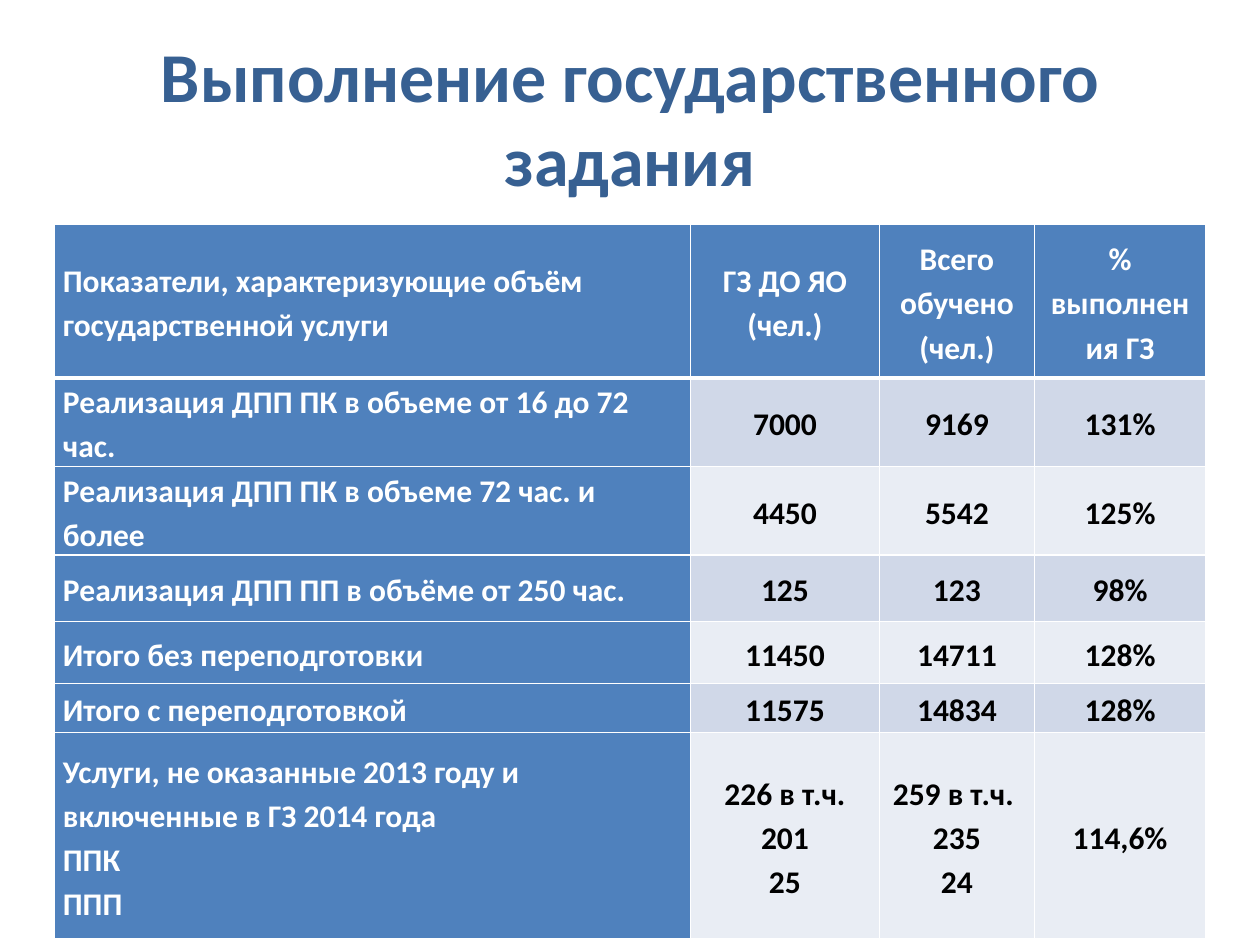
from lxml import etree
from pptx import Presentation
from pptx.dml.color import RGBColor
from pptx.enum.text import MSO_ANCHOR as Anchor, PP_ALIGN as Align
from pptx.oxml.ns import qn
from pptx.util import Inches, Pt

WHITE, BLUE = "FFFFFF", "4F81BD"
BANDS = ["D0D8E8", "E9EDF4"]
COLS = [5.05, 1.5, 1.23, 1.36]
HEIGHTS = [1.22, 0.65, 0.52, 0.53, 0.49, 0.39, 1.64]
ROWS = [
    ["Показатели, характеризующие объём государственной услуги",
     "ГЗ ДО ЯО (чел.)", "Всего обучено (чел.)", "% выполнения ГЗ"],
    ["Реализация ДПП ПК в объеме от 16 до 72 час.", "7000", "9169", "131%"],
    ["Реализация ДПП ПК в объеме 72 час. и более", "4450", "5542", "125%"],
    ["Реализация ДПП ПП в объёме от 250 час.", "125", "123", "98%"],
    ["Итого без переподготовки", "11450", "14711", "128%"],
    ["Итого с переподготовкой", "11575", "14834", "128%"],
    ["Услуги, не оказанные 2013 году и включенные в ГЗ 2014 года\nППК\nППП",
     "226 в т.ч.\n201\n25", "259 в т.ч. \n235\n24", "114,6%"],
]


def rgb(value):
    return RGBColor.from_string(value)


def set_borders(cell, widths):
    """Draw white borders; widths maps the sides L, R, T, B to points."""
    tc_pr = cell._tc.get_or_add_tcPr()
    for i, (side, width) in enumerate(widths.items()):
        ln = etree.Element(qn(f"a:ln{side}"), w=str(Pt(width)))
        fill = etree.SubElement(ln, qn("a:solidFill"))
        etree.SubElement(fill, qn("a:srgbClr"), val=WHITE)
        tc_pr.insert(i, ln)


prs = Presentation()
prs.slide_width, prs.slide_height = Inches(10), Inches(7.5)
s = prs.slides.add_slide(prs.slide_layouts[5])

title = s.shapes.title
title.left, title.top = Inches(0.5), Inches(0.3)
title.width, title.height = Inches(9), Inches(1.25)
tf = title.text_frame
tf.text = "Выполнение государственного задания"
tf.vertical_anchor = Anchor.MIDDLE
p = tf.paragraphs[0]
p.alignment = Align.CENTER
p.font.name, p.font.size, p.font.bold = "Calibri", Pt(40), True
p.font.color.rgb = rgb("376092")

table = s.shapes.add_table(len(ROWS), len(COLS), Inches(0.43), Inches(1.78),
                           Inches(sum(COLS)), Inches(sum(HEIGHTS))).table
table.first_col = True
for col, width in zip(table.columns, COLS):
    col.width = Inches(width)

for r, (texts, height) in enumerate(zip(ROWS, HEIGHTS)):
    table.rows[r].height = Inches(height)
    for c, text in enumerate(texts):
        cell = table.cell(r, c)
        is_header = r == 0 or c == 0
        cell.fill.solid()
        cell.fill.fore_color.rgb = rgb(BLUE if is_header else BANDS[(r - 1) % 2])
        cell.vertical_anchor = Anchor.MIDDLE
        cell.margin_left = cell.margin_right = Inches(0.07)
        cell.margin_top = cell.margin_bottom = 0
        set_borders(cell, {"L": 1, "R": 1, "T": 3 if r == 1 else 1,
                           "B": 3 if r == 0 else 1})
        cell.text_frame.text = text
        for p in cell.text_frame.paragraphs:
            p.alignment = Align.CENTER if c else Align.LEFT
            p.line_spacing = 1.15
            p.font.name, p.font.size, p.font.bold = "Calibri", Pt(18), True
            p.font.color.rgb = rgb(WHITE if is_header else "000000")

prs.save("out.pptx")
